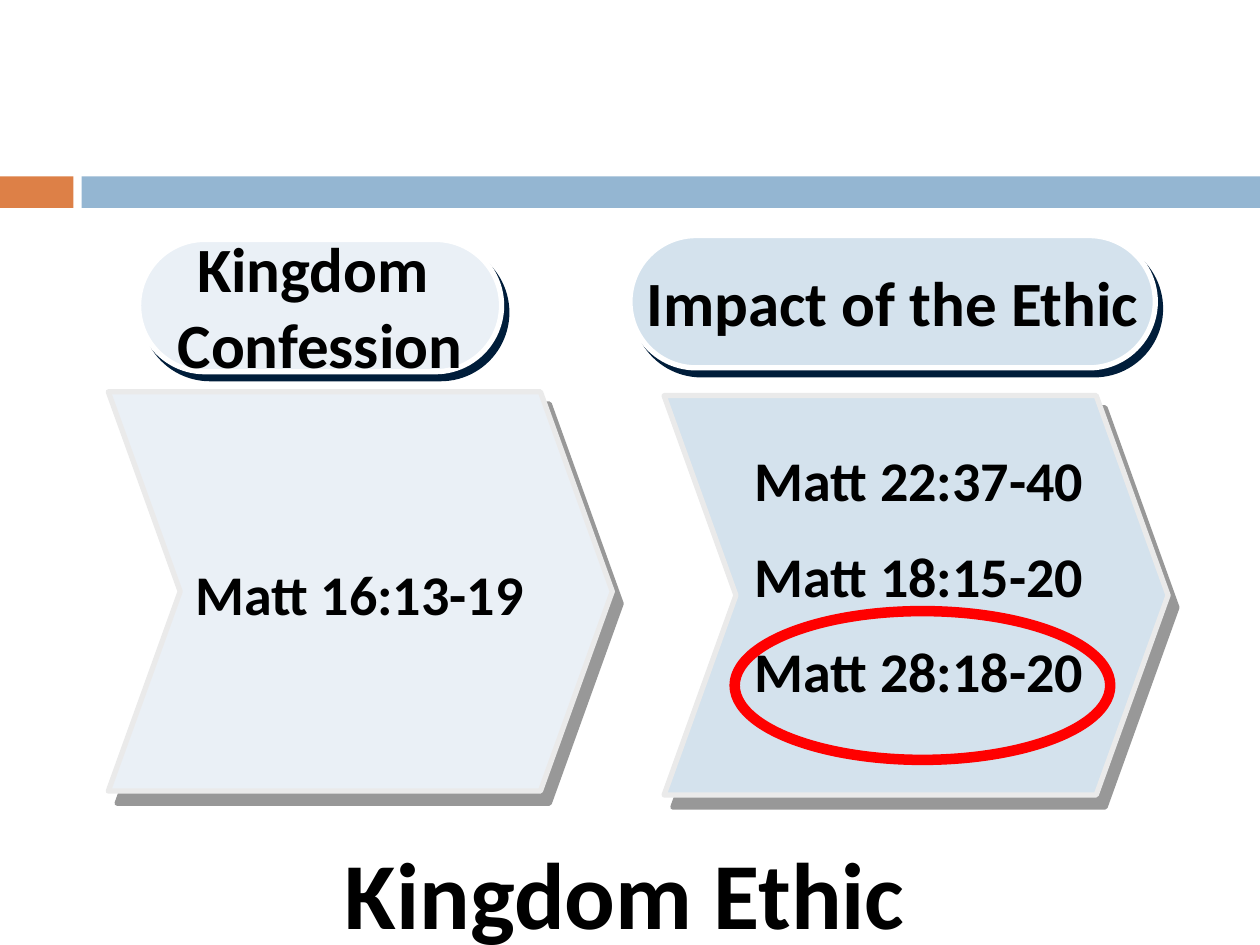
from lxml import etree
from pptx import Presentation
from pptx import util as u
from pptx.dml.color import RGBColor
from pptx.enum import shapes, text
from pptx.oxml import ns

COLORS = {
    "orange": "DD8047", "blue": "94B6D2", "pale": "EAF0F6", "sky": "D4E2ED",
    "edge": "EAEAEA", "white": "FFFFFF", "black": "000000", "red": "FF0000",
    "gray": "333333", "navy": "001D3A",
}
SHAPE = shapes.MSO_SHAPE
CENTER = text.PP_ALIGN.CENTER
LEFT = text.PP_ALIGN.LEFT


class SlideBuilder:
    def __init__(self, page, font="Calibri"):
        self.page = page
        self.font = font

    def color(self, name):
        return RGBColor.from_string(COLORS[name])

    def shape(self, kind, at, fill=None, line=None, width=3, adjust=None):
        shape = self.page.shapes.add_shape(kind, *map(u.Pt, at))
        shape.shadow.inherit = False
        if adjust is not None:
            shape.adjustments[0] = adjust
        if fill:
            shape.fill.solid()
            shape.fill.fore_color.rgb = self.color(fill)
        else:
            shape.fill.background()
        if line:
            shape.line.color.rgb = self.color(line)
            shape.line.width = u.Pt(width)
        else:
            shape.line.fill.background()
        return shape

    def shadow(self, shape, color, opacity, distance, angle):
        """Add a hard outer shadow: opacity in percent, angle in degrees."""
        effects = shape._element.spPr.find(ns.qn("a:effectLst"))
        outer = etree.SubElement(
            effects, ns.qn("a:outerShdw"), blurRad="0", dist=str(u.Pt(distance)),
            dir=str(angle * 60000), algn="ctr", rotWithShape="0")
        rgb = etree.SubElement(outer, ns.qn("a:srgbClr"), val=COLORS[color])
        etree.SubElement(rgb, ns.qn("a:alpha"), val=str(opacity * 1000))

    def add_lines(self, frame, lines, size, align, gap=0):
        """Add one paragraph a line, with gap points between them."""
        style = {"name": self.font, "size": u.Pt(size), "bold": True}
        for index, line in enumerate(lines):
            para = frame.paragraphs[0] if index == 0 else frame.add_paragraph()
            para.alignment = align
            if index and gap:
                para.space_before = u.Pt(gap)
            span = para.add_run()
            span.text = line
            for key, value in style.items():
                setattr(span.font, key, value)
            span.font.color.rgb = self.color("black")

    def chevron(self, left, top, fill):
        shape = self.shape(SHAPE.CHEVRON, (left, top, 288, 228.2), fill, "edge",
                           adjust=0.18)
        self.shadow(shape, "gray", 50, 8.6, 54)

    def pill(self, at, fill, lines):
        shape = self.shape(SHAPE.ROUNDED_RECTANGLE, at, fill, "white", adjust=0.5)
        self.shadow(shape, "navy", 100, 5, 53)
        frame = shape.text_frame
        frame.word_wrap = False
        frame.vertical_anchor = text.MSO_ANCHOR.MIDDLE
        self.add_lines(frame, lines, 36, CENTER)

    def text(self, at, lines, size=32, align=LEFT):
        box = self.page.shapes.add_textbox(*map(u.Pt, at))
        box.text_frame.word_wrap = True
        self.add_lines(box.text_frame, lines, size, align, gap=16)


def main():
    deck = Presentation()
    deck.slide_width, deck.slide_height = u.Pt(720), u.Pt(540)
    slide = SlideBuilder(deck.slides.add_slide(deck.slide_layouts[6]))

    slide.shape(SHAPE.RECTANGLE, (0, 100.8, 42, 18), "orange")
    slide.shape(SHAPE.RECTANGLE, (46.6, 100.8, 673.4, 18), "blue")

    slide.chevron(379.5, 226.1, "sky")
    slide.chevron(61.9, 223.9, "pale")
    slide.pill((79.2, 136.8, 207.4, 75.6), "pale", ["Kingdom ", "Confession"])
    slide.pill((360, 134.6, 300.2, 75.6), "sky", ["Impact of the Ethic"])

    slide.text((104.4, 316.1, 209.5, 46.1), ["Matt 16:13-19"])
    slide.text((424.1, 251.3, 209.5, 162.7),
               ["Matt 22:37-40", "Matt 18:15-20", "Matt 28:18-20"])
    slide.text((138.2, 473.8, 437.8, 72.7), ["Kingdom Ethic"], 54, CENTER)
    slide.shape(SHAPE.OVAL, (419.8, 349.2, 214.6, 85), line="red", width=6)

    deck.save("out.pptx")


if __name__ == "__main__":
    main()
